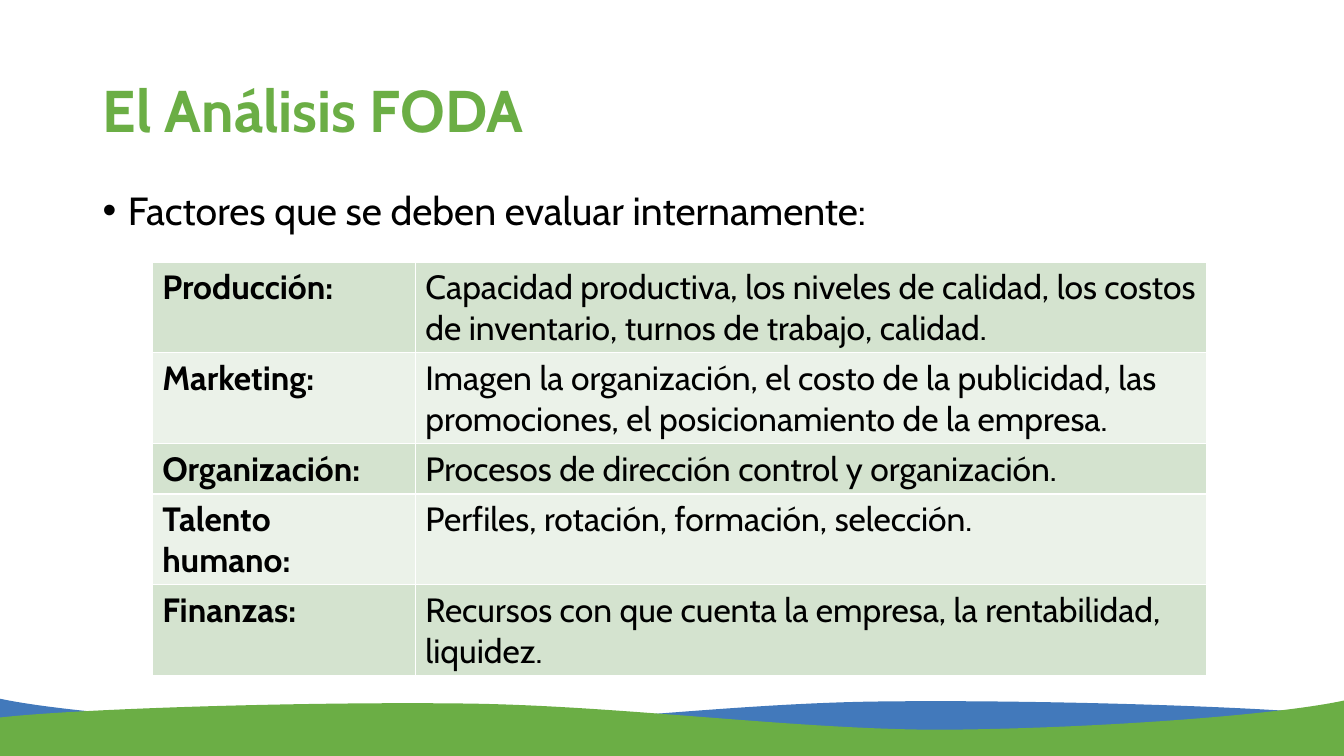
from lxml import etree
from pptx import Presentation
from pptx.dml.color import RGBColor
from pptx.enum.text import MSO_ANCHOR
from pptx.oxml.ns import qn
from pptx.util import Inches, Pt

MIDDLE = MSO_ANCHOR.MIDDLE
TOP = MSO_ANCHOR.TOP
FONT = "Cabin"
WIDTH, HEIGHT = 13.33, 7.5
GREEN, BLUE, BLACK, WHITE = "6BAE45", "4279BB", "000000", "FFFFFF"
BANDS = ("D4E3CF", "EBF2E9")

# Crest of the footer wave, right to left: start, then cubic segments
START = (13.33, 7.1)
CURVES = [
    ((12.56, 7.01), (10.26, 6.94), (8.7, 6.96)),
    ((7.15, 6.98), (5.43, 7.22), (3.98, 7.22)),
    ((2.53, 7.21), (0.68, 7.08), (-0.01, 6.93)),
]
SPAN = START[0] + CURVES[-1][-1][0]

FACTORS = [
    ("Producción:", "Capacidad productiva, los niveles de calidad, los costos "
     "de inventario, turnos de trabajo, calidad."),
    ("Marketing:", "Imagen la organización, el costo de la publicidad, las "
     "promociones, el posicionamiento de la empresa."),
    ("Organización:", "Procesos de dirección control y organización."),
    ("Talento humano:", "Perfiles, rotación, formación, selección."),
    ("Finanzas:", "Recursos con que cuenta la empresa, la rentabilidad, "
     "liquidez."),
]


def color(code):
    return RGBColor.from_string(code)


def add_run(para, text, size, code, bold=False):
    run = para.add_run()
    run.text = text
    run.font.name = FONT
    run.font.size = Pt(size)
    run.font.bold = bold
    run.font.color.rgb = color(code)


def add_text(slide, box, text, size, code, bold=False, anchor=TOP):
    frame = slide.shapes.add_textbox(*map(Inches, box)).text_frame
    frame.word_wrap = True
    frame.vertical_anchor = anchor
    para = frame.paragraphs[0]
    para.line_spacing = 0.9
    add_run(para, text, size, code, bold)
    return para


def add_bullet(para):
    props = para._p.get_or_add_pPr()
    props.set("marL", str(Inches(0.25)))
    props.set("indent", str(Inches(-0.25)))
    etree.SubElement(props, qn("a:buFont")).set("typeface", "Arial")
    etree.SubElement(props, qn("a:buChar")).set("char", "•")


def bend(shape, curves):
    """Turn the first straight segments of a freeform into cubic curves."""
    lines = list(shape._element.iter(qn("a:lnTo")))
    for line, curve in zip(lines, curves):
        cubic = etree.Element(qn("a:cubicBezTo"))
        for x, y in curve:
            etree.SubElement(cubic, qn("a:pt"), x=str(x - shape.left),
                             y=str(y - shape.top))
        line.getparent().replace(line, cubic)


def add_wave(slide, code, flip=False, drop=0):
    def spot(point):
        x, y = point
        return Inches(SPAN - x if flip else x), Inches(y + drop)

    curves = [[spot(point) for point in curve] for curve in CURVES]
    first = spot(START)
    ends = [curve[-1] for curve in curves]
    base = Inches(HEIGHT + drop)
    build = slide.shapes.build_freeform(*first)
    build.add_line_segments(ends + [(ends[-1][0], base), (first[0], base)],
                            close=True)
    wave = build.convert_to_shape()
    bend(wave, curves)
    wave.shadow.inherit = False
    wave.fill.solid()
    wave.fill.fore_color.rgb = color(code)
    wave.line.fill.background()


def add_border(cell, code):
    props = cell._tc.get_or_add_tcPr()
    for side in ("lnL", "lnR", "lnT", "lnB"):
        line = etree.SubElement(props, qn(f"a:{side}"), w=str(Pt(1)))
        fill = etree.SubElement(line, qn("a:solidFill"))
        etree.SubElement(fill, qn("a:srgbClr"), val=code)


def add_factors(slide):
    frame = slide.shapes.add_table(len(FACTORS), 2, Inches(1.51), Inches(2.6),
                                   Inches(10.46), Inches(4.1))
    table = frame.table
    table.first_row = False
    table.columns[0].width = Inches(2.61)
    table.columns[1].width = Inches(7.85)
    for i, texts in enumerate(FACTORS):
        # Rows grow to fit their text
        table.rows[i].height = Inches(0.41)
        for j, text in enumerate(texts):
            cell = table.cell(i, j)
            add_border(cell, WHITE)
            cell.fill.solid()
            cell.fill.fore_color.rgb = color(BANDS[i % 2])
            add_run(cell.text_frame.paragraphs[0], text, 24, BLACK, j == 0)
    frame.height = Inches(4.1)


def main():
    deck = Presentation()
    deck.slide_width, deck.slide_height = Inches(WIDTH), Inches(HEIGHT)
    slide = deck.slides.add_slide(deck.slide_layouts[6])

    # Footer waves: the green one mirrors the blue one
    add_wave(slide, BLUE)
    add_wave(slide, GREEN, flip=True, drop=0.02)

    # Heading and lead-in
    add_text(slide, (0.92, 0.4, 11.5, 1.45), "El Análisis FODA", 42, GREEN,
             bold=True, anchor=MIDDLE)
    lead = add_text(slide, (0.92, 1.85, 11.5, 0.73),
                    "Factores que se deben evaluar internamente:", 28, BLACK)
    lead.space_before = Pt(10)
    add_bullet(lead)

    # Internal factors
    add_factors(slide)
    deck.save("out.pptx")


if __name__ == "__main__":
    main()
